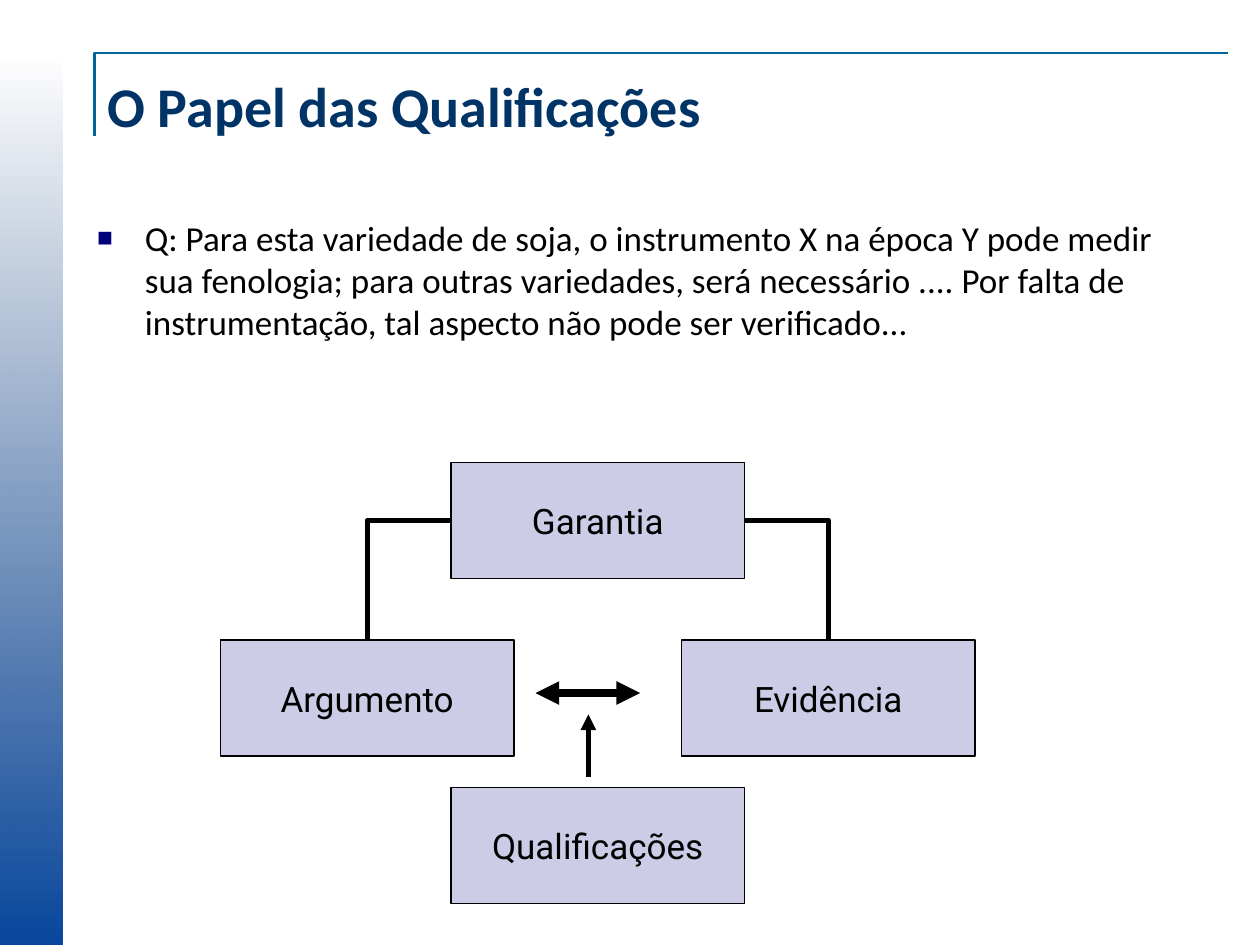
from dataclasses import dataclass

from lxml import etree
from pptx import Presentation
from pptx.dml.color import RGBColor
from pptx.enum.shapes import MSO_CONNECTOR, MSO_SHAPE
from pptx.enum.text import MSO_ANCHOR, MSO_AUTO_SIZE, PP_ALIGN
from pptx.oxml.ns import qn
from pptx.util import Inches, Pt

RECTANGLE = MSO_SHAPE.RECTANGLE
STRAIGHT, ELBOW = MSO_CONNECTOR.STRAIGHT, MSO_CONNECTOR.ELBOW
LEFT, CENTER = PP_ALIGN.LEFT, PP_ALIGN.CENTER
TOP, MIDDLE = MSO_ANCHOR.TOP, MSO_ANCHOR.MIDDLE
NO_AUTOFIT = MSO_AUTO_SIZE.NONE
SITE_TOP, SITE_LEFT, SITE_RIGHT = 0, 1, 3
BOX_WIDTH, BOX_HEIGHT = 2.33, 0.92


@dataclass(frozen=True)
class Theme:
    text_font: str = "Calibri"
    box_font: str = "Roboto"
    title_size: int = 32
    text_size: int = 20
    title: str = "003366"
    ink: str = "000000"
    bullet: str = "00007D"
    rule: str = "006699"
    box: str = "CCCCE6"
    band_bottom: str = "08479C"
    band_top: str = "063370"


def rgb(code):
    return RGBColor.from_string(code)


def add_child(parent, tag, **attributes):
    return etree.SubElement(parent, qn(tag), attributes)


class SlideBuilder:
    """Draws elements on one page in the style of a theme."""

    def __init__(self, page, theme):
        self.page = page
        self.theme = theme

    def add_span(self, para, text, font, size, color, bold=False):
        span = para.add_run()
        span.text = text
        span.font.name = font
        span.font.size = Pt(size)
        span.font.bold = bold
        span.font.color.rgb = rgb(color)

    def place(self, holder, left, top, width, height, anchor):
        """Move a placeholder and return its first paragraph."""
        holder.left, holder.top = Inches(left), Inches(top)
        holder.width, holder.height = Inches(width), Inches(height)
        frame = holder.text_frame
        frame.word_wrap = True
        frame.auto_size = NO_AUTOFIT
        frame.vertical_anchor = anchor
        para = frame.paragraphs[0]
        para.alignment = LEFT
        para.space_before = Pt(0)
        return para

    def title(self, text, *bounds):
        para = self.place(self.page.shapes.title, *bounds, MIDDLE)
        look = self.theme
        self.add_span(para, text, look.text_font, look.title_size, look.title, bold=True)

    def bullet(self, text, *bounds):
        para = self.place(self.page.placeholders[1], *bounds, TOP)
        look = self.theme
        properties = para._p.get_or_add_pPr()
        indent = Inches(0.38)
        properties.set("marL", str(indent))
        properties.set("indent", str(-indent))
        color = add_child(properties, "a:buClr")
        add_child(color, "a:srgbClr", val=look.bullet)
        add_child(properties, "a:buSzPct", val="75000")
        add_child(properties, "a:buChar", char="■")
        self.add_span(para, text, look.text_font, look.text_size, look.ink)

    def band(self, left, top, width, height):
        """Draw a side band that fades out towards its top."""
        band = self.page.shapes.add_shape(
            RECTANGLE, Inches(left), Inches(top), Inches(width), Inches(height))
        band.shadow.inherit = False
        band.line.fill.background()
        band.fill.gradient()
        band.fill.gradient_angle = 90
        colors = (self.theme.band_bottom, self.theme.band_top)
        for stop, color in zip(band.fill.gradient_stops, colors):
            stop.color.rgb = rgb(color)
        top_color = list(band._element.iter(qn("a:srgbClr")))[-1]
        add_child(top_color, "a:alpha", val="0")

    def corner_rule(self, left, top, right, bottom):
        outline = self.page.shapes.build_freeform(Inches(left), Inches(bottom))
        outline.add_line_segments(
            [(Inches(left), Inches(top)), (Inches(right), Inches(top))], close=False)
        rule = outline.convert_to_shape()
        rule.shadow.inherit = False
        rule.fill.background()
        rule.line.color.rgb = rgb(self.theme.rule)
        rule.line.width = Pt(1.5)

    def box(self, text, left, top):
        look = self.theme
        box = self.page.shapes.add_shape(
            RECTANGLE, Inches(left), Inches(top), Inches(BOX_WIDTH), Inches(BOX_HEIGHT))
        box.shadow.inherit = False
        box.fill.solid()
        box.fill.fore_color.rgb = rgb(look.box)
        box.line.color.rgb = rgb(look.ink)
        box.line.width = Pt(0.75)
        frame = box.text_frame
        frame.word_wrap = False
        frame.vertical_anchor = MIDDLE
        para = frame.paragraphs[0]
        para.alignment = CENTER
        self.add_span(para, text, look.box_font, look.text_size, look.ink)
        return box

    def connector(self, kind, start, end, weight):
        line = self.page.shapes.add_connector(
            kind, *(Inches(value) for value in (*start, *end)))
        line.line.color.rgb = rgb(self.theme.ink)
        line.line.width = Pt(weight)
        add_child(line._element.spPr, "a:effectLst")
        return line

    def arrow(self, start, end, weight, ends=("tailEnd",)):
        line = self.connector(STRAIGHT, start, end, weight)
        outline = line._element.spPr.find(qn("a:ln"))
        for name in ends:
            add_child(outline, f"a:{name}", type="triangle")

    def elbow(self, source, source_site, target):
        """Join a side of source to the top of target with one bend."""
        line = self.connector(ELBOW, (0, 0), (1, 1), 3)
        line._element.spPr.find(qn("a:prstGeom")).set("prst", "bentConnector2")
        line.begin_connect(source, source_site)
        line.end_connect(target, SITE_TOP)


def main():
    deck = Presentation()
    deck.slide_width, deck.slide_height = Inches(10), Inches(7.5)
    page = deck.slides.add_slide(deck.slide_layouts[1])
    slide = SlideBuilder(page, Theme())

    slide.band(0, 0.42, 0.5, 7.08)
    slide.corner_rule(0.75, 0.42, 9.75, 1.08)
    slide.title("O Papel das Qualificações", 0.75, 0.42, 8.92, 0.83)
    slide.bullet(
        "Q: Para esta variedade de soja, o instrumento X na época Y pode medir "
        "sua fenologia; para outras variedades, será necessário .... Por falta de "
        "instrumentação, tal aspecto não pode ser verificado...",
        0.67, 1.67, 9, 1.33)

    middle, spread, lower_row = 3.58, 1.83, 5.08
    argument = slide.box("Argumento", middle - spread, lower_row)
    evidence = slide.box("Evidência", middle + spread, lower_row)
    warrant = slide.box("Garantia", middle, 3.67)
    slide.box("Qualificações", middle, 6.25)

    slide.elbow(warrant, SITE_LEFT, argument)
    slide.elbow(warrant, SITE_RIGHT, evidence)
    slide.arrow((4.25, 5.5), (5.08, 5.5), 4.5, ends=("headEnd", "tailEnd"))
    slide.arrow((4.67, 6.17), (4.67, 5.67), 3)

    deck.save("out.pptx")


if __name__ == "__main__":
    main()
